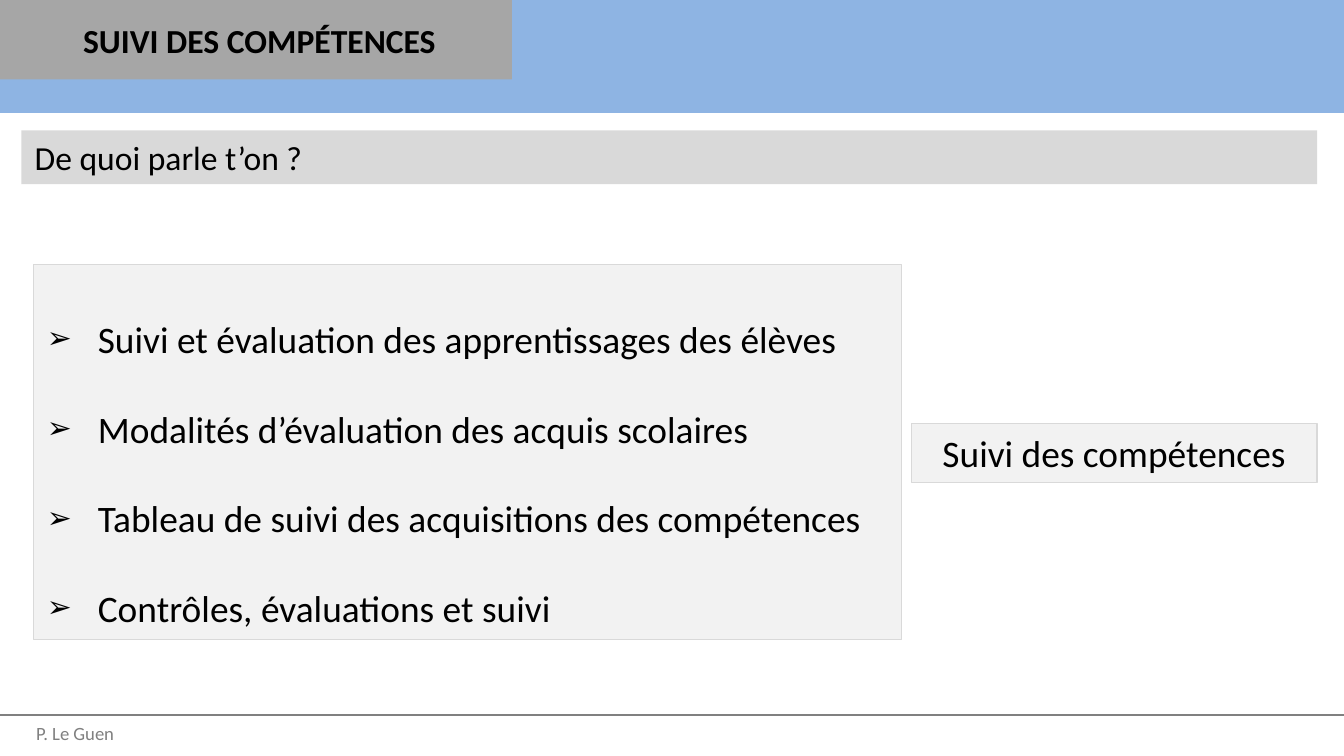
from lxml import etree
from pptx import Presentation
from pptx import util as u
from pptx.dml.color import RGBColor
from pptx.enum import shapes, text
from pptx.oxml.ns import qn

COLORS = {
    "banner": "8EB4E3",
    "title_tab": "A6A6A6",
    "border": "D9D9D9",
    "panel": "F2F2F2",
    "text": "000000",
    "footer": "808080",
}
TOPICS = [
    "Suivi et évaluation des apprentissages des élèves",
    "Modalités d’évaluation des acquis scolaires",
    "Tableau de suivi des acquisitions des compétences",
    "Contrôles, évaluations et suivi",
]


def color(name):
    return RGBColor.from_string(COLORS[name])


def add_rectangle(slide, box, fill, border=None):
    shape = slide.shapes.add_shape(
        shapes.MSO_SHAPE.RECTANGLE, *map(u.Inches, box))
    shape.shadow.inherit = False
    shape.fill.solid()
    shape.fill.fore_color.rgb = color(fill)
    if border:
        shape.line.color.rgb = color(border)
        shape.line.width = u.Pt(0.75)
    else:
        shape.line.fill.background()
    return shape


def add_bullet(paragraph):
    properties = paragraph._p.get_or_add_pPr()
    properties.set("marL", str(u.Inches(0.38)))
    properties.set("indent", str(-u.Inches(0.38)))
    etree.SubElement(properties, qn("a:buSzPct"), val="80000")
    etree.SubElement(properties, qn("a:buFont"), typeface="Calibri")
    etree.SubElement(properties, qn("a:buChar"), char="➢")


def write_text(shape, lines, size, ink="text", bold=False, wrap=True,
               align=text.PP_ALIGN.LEFT, bullets=False, spacing=None):
    frame_format = {
        "word_wrap": wrap,
        "auto_size": text.MSO_AUTO_SIZE.SHAPE_TO_FIT_TEXT,
        "vertical_anchor": text.MSO_ANCHOR.TOP,
    }
    paragraph_format = {"alignment": align, "line_spacing": spacing}
    font_format = {"name": "Calibri", "size": u.Pt(size), "bold": bold}
    frame = shape.text_frame
    for name, value in frame_format.items():
        setattr(frame, name, value)
    for index, line in enumerate(lines):
        paragraph = frame.add_paragraph() if index else frame.paragraphs[0]
        if bullets:
            add_bullet(paragraph)
        for name, value in paragraph_format.items():
            setattr(paragraph, name, value)
        run = paragraph.add_run()
        run.text = line
        for name, value in font_format.items():
            setattr(run.font, name, value)
        run.font.color.rgb = color(ink)


def add_label(slide, box, line, size, **options):
    label = slide.shapes.add_textbox(*map(u.Inches, box))
    write_text(label, [line], size, **options)


def add_rule(slide, top, width):
    rule = slide.shapes.add_connector(
        shapes.MSO_CONNECTOR.STRAIGHT,
        u.Inches(0), u.Inches(top), u.Inches(width), u.Inches(top))
    rule.line.color.rgb = color("footer")
    rule.line.width = u.Pt(0.75)
    etree.SubElement(rule._element.spPr, qn("a:effectLst"))


def main():
    presentation = Presentation()
    presentation.slide_width = u.Inches(10)
    presentation.slide_height = u.Inches(10 * 9 / 16)
    slide = presentation.slides.add_slide(presentation.slide_layouts[6])

    add_rectangle(slide, (0, 0, 10, 0.84), "banner")
    add_rectangle(slide, (0, 0, 3.81, 0.59), "title_tab")
    add_label(slide, (0.52, 0.1, 2.85, 0.4), "SUIVI DES COMPÉTENCES", 18,
              bold=True, wrap=False)

    question = add_rectangle(slide, (0.16, 0.97, 9.64, 0.4), "border")
    write_text(question, ["De quoi parle t’on ?"], 18)

    topics = add_rectangle(slide, (0.25, 1.97, 6.46, 2.79), "panel", "border")
    write_text(topics, TOPICS, 20, bullets=True, spacing=2.0)

    summary = add_rectangle(slide, (6.78, 3.15, 3.02, 0.44), "panel", "border")
    write_text(summary, ["Suivi des compétences"], 20,
               align=text.PP_ALIGN.CENTER)

    add_rule(slide, 5.32, 10)
    add_label(slide, (0.17, 5.32, 1.01, 0.27), "P. Le Guen", 10, ink="footer")

    presentation.save("out.pptx")


if __name__ == "__main__":
    main()
